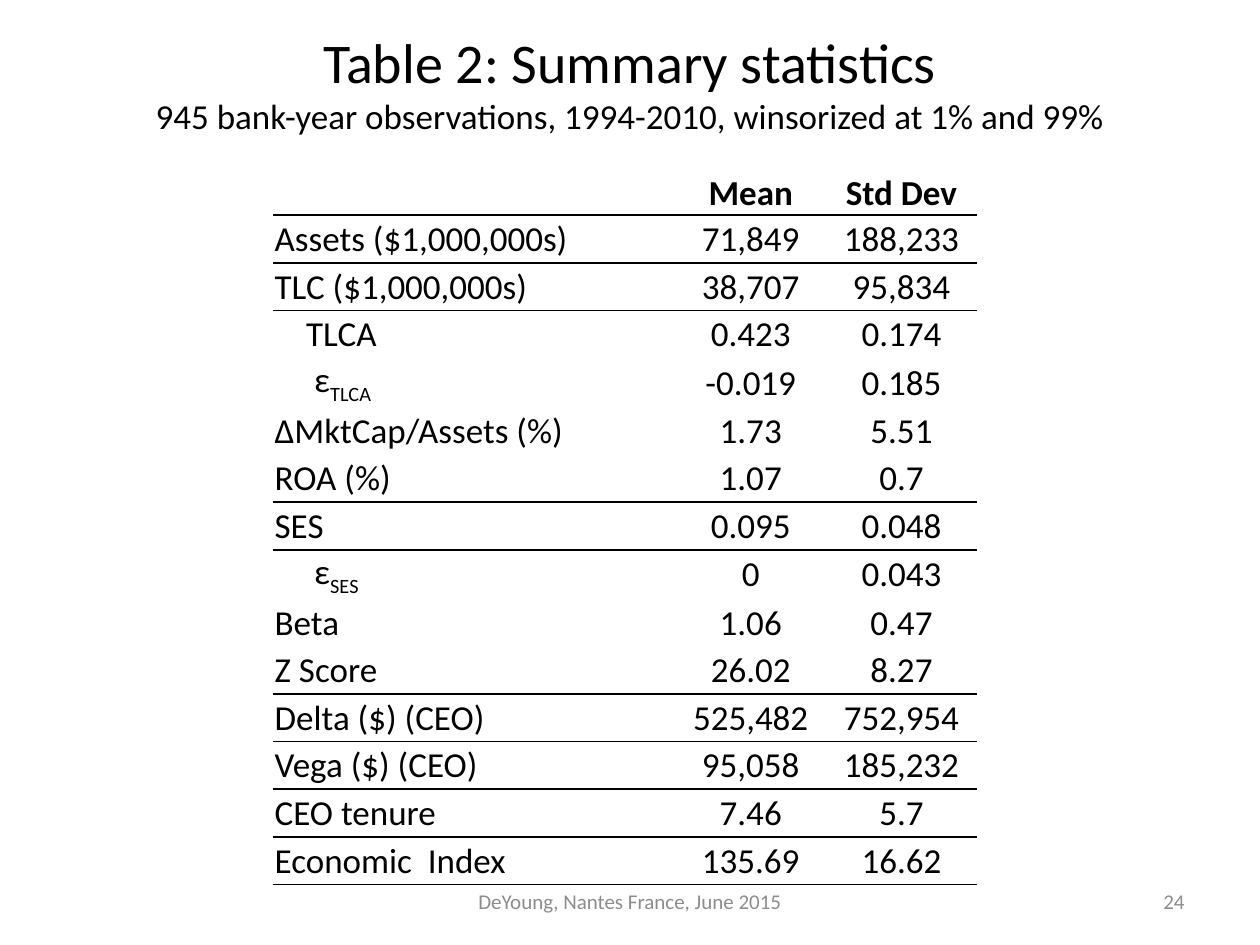
from dataclasses import dataclass

from lxml.etree import SubElement
from pptx import Presentation
from pptx.dml.color import RGBColor
from pptx.enum.text import MSO_ANCHOR, PP_ALIGN
from pptx.oxml import parse_xml
from pptx.oxml.ns import nsdecls, qn
from pptx.util import Pt

COLORS = {"text": "000000", "rule": "000000", "footer": "8C8C8C"}
FONT = "Calibri"
NO_STYLE = "{2D5ABB26-0587-4C30-8999-92F81FD0307C}"
TABLE_LEFT, TABLE_TOP, ROW_HEIGHT = 156.24, 95.76, 27.22
COLUMN_WIDTHS = (229.7, 86.15, 86.15)
CELL_INSET = 0.72


@dataclass
class Row:
    label: str
    mean: str
    deviation: str
    ruled: bool = False
    indent: float = 0
    subscript: str = ""


@dataclass
class TextBox:
    left: float
    top: float
    width: float
    height: float
    lines: tuple[tuple[str, float], ...]
    alignment: PP_ALIGN = PP_ALIGN.CENTER
    anchor: MSO_ANCHOR = MSO_ANCHOR.MIDDLE
    color: str = "footer"


ROWS = [
    Row("", "Mean", "Std Dev", ruled=True),
    Row("Assets ($1,000,000s)", "71,849", "188,233", ruled=True),
    Row("TLC ($1,000,000s)", "38,707", "95,834", ruled=True),
    Row("TLCA", "0.423", "0.174", indent=18),
    Row("ε", "-0.019", "0.185", indent=22.6, subscript="TLCA"),
    Row("ΔMktCap/Assets (%)", "1.73", "5.51"),
    Row("ROA (%)", "1.07", "0.7", ruled=True),
    Row("SES", "0.095", "0.048", ruled=True),
    Row("ε", "0", "0.043", indent=22.6, subscript="SES"),
    Row("Beta", "1.06", "0.47"),
    Row("Z Score", "26.02", "8.27", ruled=True),
    Row("Delta ($) (CEO)", "525,482", "752,954", ruled=True),
    Row("Vega ($) (CEO)", "95,058", "185,232", ruled=True),
    Row("CEO tenure", "7.46", "5.7", ruled=True),
    Row("Economic  Index", "135.69", "16.62", ruled=True),
]

TEXT_BOXES = [
    TextBox(36, 12, 648, 84,
            (("Table 2: Summary statistics", 32),
             ("945 bank-year observations, 1994-2010, winsorized at 1% and 99%", 20)),
            anchor=MSO_ANCHOR.TOP, color="text"),
    TextBox(246, 500.5, 228, 28.75, (("DeYoung, Nantes France, June 2015", 12),)),
    TextBox(516, 500.5, 168, 28.75, (("24", 12),), alignment=PP_ALIGN.RIGHT),
]


def set_font(font, color: str) -> None:
    font.name = FONT
    font.color.rgb = RGBColor.from_string(COLORS[color])


def add_text_box(slide, box: TextBox) -> None:
    shape = slide.shapes.add_textbox(Pt(box.left), Pt(box.top), Pt(box.width), Pt(box.height))
    frame = shape.text_frame
    frame.word_wrap = True
    frame.vertical_anchor = box.anchor
    paragraph = frame.paragraphs[0]
    paragraph.alignment = box.alignment
    set_font(paragraph.font, box.color)
    for index, (text, size) in enumerate(box.lines):
        if index:
            paragraph.add_line_break()
        run = paragraph.add_run()
        run.text = text
        run.font.size = Pt(size)
        set_font(run.font, box.color)


def add_bottom_rule(cell) -> None:
    rule = parse_xml(f'<a:lnB {nsdecls("a")} w="{Pt(1)}"/>')
    fill = SubElement(rule, qn("a:solidFill"))
    SubElement(fill, qn("a:srgbClr"), val=COLORS["rule"])
    cell._tc.get_or_add_tcPr().insert(0, rule)


def fill_cell(cell, text: str, row: Row, is_label: bool, is_header: bool) -> None:
    cell.fill.background()
    cell.margin_left = Pt(CELL_INSET + (row.indent if is_label else 0))
    cell.margin_right = cell.margin_top = Pt(CELL_INSET)
    cell.margin_bottom = Pt(0)
    cell.vertical_anchor = MSO_ANCHOR.BOTTOM if is_header else MSO_ANCHOR.MIDDLE
    paragraph = cell.text_frame.paragraphs[0]
    paragraph.alignment = PP_ALIGN.LEFT if is_label else PP_ALIGN.CENTER
    paragraph.font.size = Pt(20)
    paragraph.font.bold = is_header
    set_font(paragraph.font, "text")
    if text:
        paragraph.add_run().text = text
    if is_label and row.subscript:
        run = paragraph.add_run()
        run.text = row.subscript
        run.font._element.set("baseline", "-25000")
    if row.ruled:
        add_bottom_rule(cell)


def add_statistics_table(slide) -> None:
    frame = slide.shapes.add_table(
        len(ROWS), len(COLUMN_WIDTHS), Pt(TABLE_LEFT), Pt(TABLE_TOP),
        Pt(sum(COLUMN_WIDTHS)), Pt(ROW_HEIGHT * len(ROWS)))
    table = frame.table
    table.horz_banding = False
    table.first_row = False
    table._tbl.tblPr.find(qn("a:tableStyleId")).text = NO_STYLE
    for column, width in zip(table.columns, COLUMN_WIDTHS):
        column.width = Pt(width)
    for row_index, row in enumerate(ROWS):
        table.rows[row_index].height = Pt(ROW_HEIGHT)
        for column_index, text in enumerate((row.label, row.mean, row.deviation)):
            fill_cell(table.cell(row_index, column_index), text, row,
                      is_label=column_index == 0, is_header=row_index == 0)


def main() -> None:
    presentation = Presentation()
    presentation.slide_width, presentation.slide_height = Pt(720), Pt(540)
    slide = presentation.slides.add_slide(presentation.slide_layouts[6])
    add_statistics_table(slide)
    for box in TEXT_BOXES:
        add_text_box(slide, box)
    presentation.save("out.pptx")


if __name__ == "__main__":
    main()
